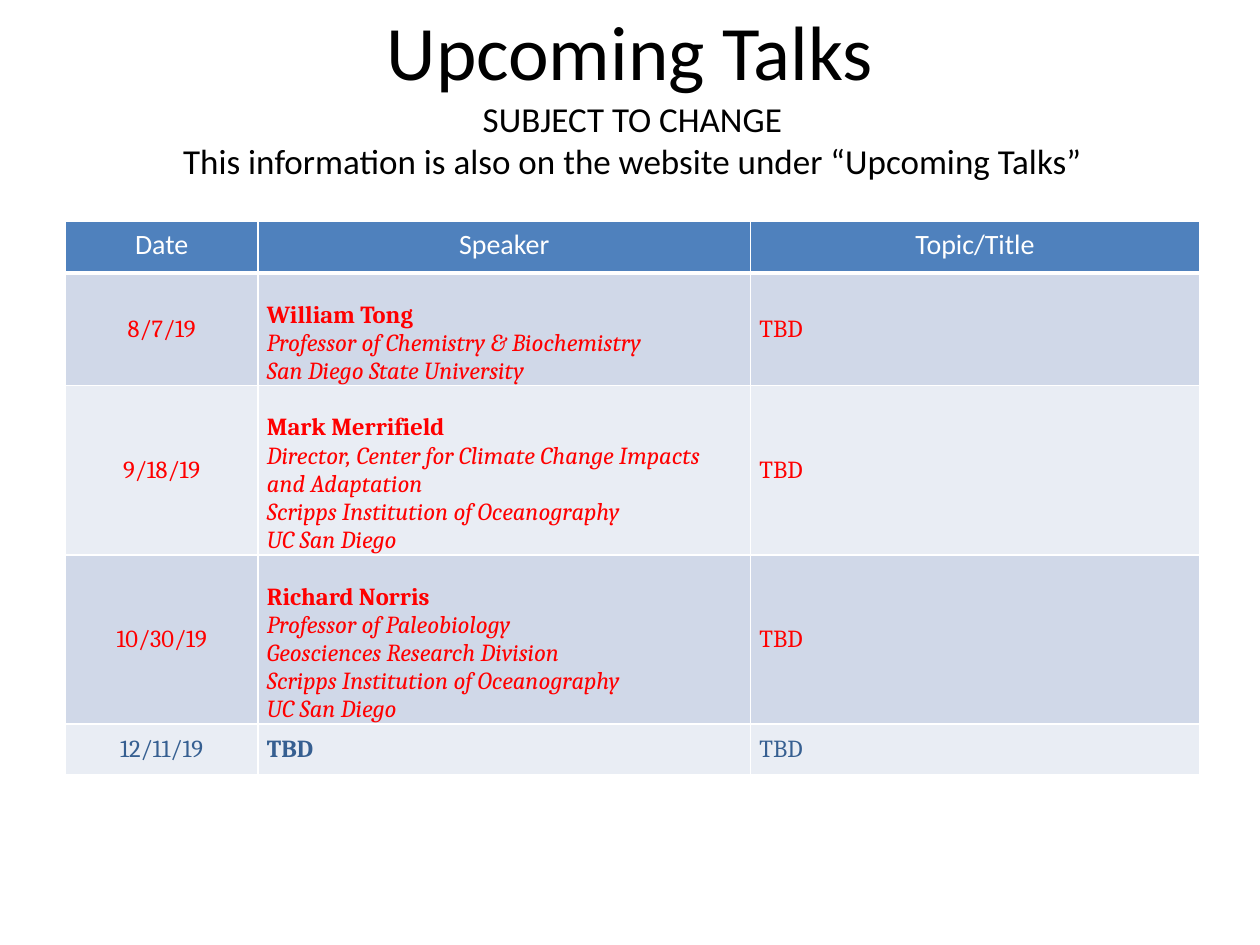
from lxml import etree
from pptx import Presentation
from pptx import util as u
from pptx.dml.color import RGBColor
from pptx.enum import text
from pptx.oxml import ns

COLORS = {
    "ink": "000000", "white": "FFFFFF", "header": "4F81BD",
    "band_dark": "D0D8E8", "band_light": "E9EDF4",
    "scheduled": "FF0000", "open": "365F91",
}
TITLE = {"name": "Calibri", "size": u.Pt(44)}
NOTICE = {"name": "Calibri", "size": u.Pt(20)}
HEADING = {"name": "Calibri", "size": u.Pt(16), "bold": False}
ENTRY = {"name": "Cambria", "size": u.Pt(14), "bold": False}
SPEAKER = {**ENTRY, "bold": True}
AFFILIATION = {**ENTRY, "italic": True}

CENTER, LEFT = text.PP_ALIGN.CENTER, text.PP_ALIGN.LEFT
HEADINGS = ["Date", "Speaker", "Topic/Title"]
COLUMN_WIDTHS = [3.88, 9.93, 9.05]
HEADER_HEIGHT = 1.03
# date, speaker lines, topic, colour, row height in cm
TALKS = [
    ("8/7/19", ["William Tong", "Professor of Chemistry & Biochemistry",
                "San Diego State University"], "TBD", "scheduled", 2.27),
    ("9/18/19", ["Mark Merrifield",
                 "Director, Center for Climate Change Impacts and Adaptation",
                 "Scripps Institution of Oceanography", "UC San Diego"],
     "TBD", "scheduled", 3.41),
    ("10/30/19", ["Richard Norris", "Professor of Paleobiology",
                  "Geosciences Research Division",
                  "Scripps Institution of Oceanography", "UC San Diego"],
     "TBD", "scheduled", 3.41),
    ("12/11/19", ["TBD"], "TBD", "open", 1.03),
]


def rgb(color):
    return RGBColor.from_string(COLORS[color])


def write_lines(frame, lines, color, align):
    """Fill a text frame with one paragraph per (wording, format) pair."""
    for index, (wording, font_format) in enumerate(lines):
        paragraph = frame.add_paragraph() if index else frame.paragraphs[0]
        paragraph.alignment = align
        run = paragraph.add_run()
        run.text = wording
        for name, value in font_format.items():
            setattr(run.font, name, value)
        run.font.color.rgb = rgb(color)


def set_borders(cell, top=1, bottom=1):
    """Draw white cell borders; widths are in points."""
    properties = cell._tc.get_or_add_tcPr()
    for side, width in {"L": 1, "R": 1, "T": top, "B": bottom}.items():
        line = etree.SubElement(properties, ns.qn(f"a:ln{side}"), w=str(u.Pt(width)))
        fill = etree.SubElement(line, ns.qn("a:solidFill"))
        etree.SubElement(fill, ns.qn("a:srgbClr"), val=COLORS["white"])


def fill_cell(cell, lines, color, align, band, borders):
    set_borders(cell, **borders)
    cell.fill.solid()
    cell.fill.fore_color.rgb = rgb(band)
    write_lines(cell.text_frame, lines, color, align)


def add_title(slide):
    title = slide.shapes.title
    title.left, title.top = u.Cm(0), u.Cm(-0.58)
    title.width, title.height = u.Cm(25.4), u.Cm(3.18)
    title.text_frame.vertical_anchor = text.MSO_ANCHOR.MIDDLE
    write_lines(title.text_frame, [("Upcoming Talks", TITLE)], "ink", CENTER)


def add_notice(slide):
    notice = slide.shapes.add_textbox(u.Cm(1.32), u.Cm(1.85), u.Cm(22.86), u.Cm(1.96))
    notice.text_frame.word_wrap = True
    write_lines(notice.text_frame, [
        ("SUBJECT TO CHANGE", NOTICE),
        ("This information is also on the website under “Upcoming Talks”", NOTICE),
    ], "ink", CENTER)


def add_talk_row(cells, talk, band, borders):
    date, (speaker, *affiliations), topic, color, _ = talk
    speaker_lines = [(speaker, SPEAKER)] + [(line, AFFILIATION) for line in affiliations]
    contents = [
        ([(date, ENTRY)], CENTER), (speaker_lines, LEFT), ([(topic, ENTRY)], LEFT),
    ]
    cell_format = {
        "vertical_anchor": text.MSO_ANCHOR.MIDDLE,
        "margin_left": u.Cm(0.18), "margin_right": u.Cm(0.18),
        "margin_top": 0, "margin_bottom": 0,
    }
    for cell, (lines, align) in zip(cells, contents):
        for name, value in cell_format.items():
            setattr(cell, name, value)
        fill_cell(cell, lines, color, align, band, borders)
    if affiliations:
        cells[1].margin_top = u.Cm(0.57)


def add_schedule(slide):
    heights = [HEADER_HEIGHT] + [talk[-1] for talk in TALKS]
    schedule = slide.shapes.add_table(
        len(heights), len(HEADINGS), u.Cm(1.32), u.Cm(4.47),
        u.Cm(sum(COLUMN_WIDTHS)), u.Cm(sum(heights))).table
    for column, width in zip(schedule.columns, COLUMN_WIDTHS):
        column.width = u.Cm(width)
    for row, height in zip(schedule.rows, heights):
        row.height = u.Cm(height)

    header, *talk_rows = schedule.rows
    for cell, heading in zip(header.cells, HEADINGS):
        fill_cell(cell, [(heading, HEADING)], "white", CENTER, "header", {"bottom": 3})
    for index, (row, talk) in enumerate(zip(talk_rows, TALKS)):
        band = "band_light" if index % 2 else "band_dark"
        add_talk_row(list(row.cells), talk, band, {"top": 1 if index else 3})


def main():
    deck = Presentation()
    deck.slide_width, deck.slide_height = u.Cm(25.4), u.Cm(19.05)
    slide = deck.slides.add_slide(deck.slide_layouts.get_by_name("Title Only"))
    add_title(slide)
    add_schedule(slide)
    add_notice(slide)
    deck.save("out.pptx")


if __name__ == "__main__":
    main()
